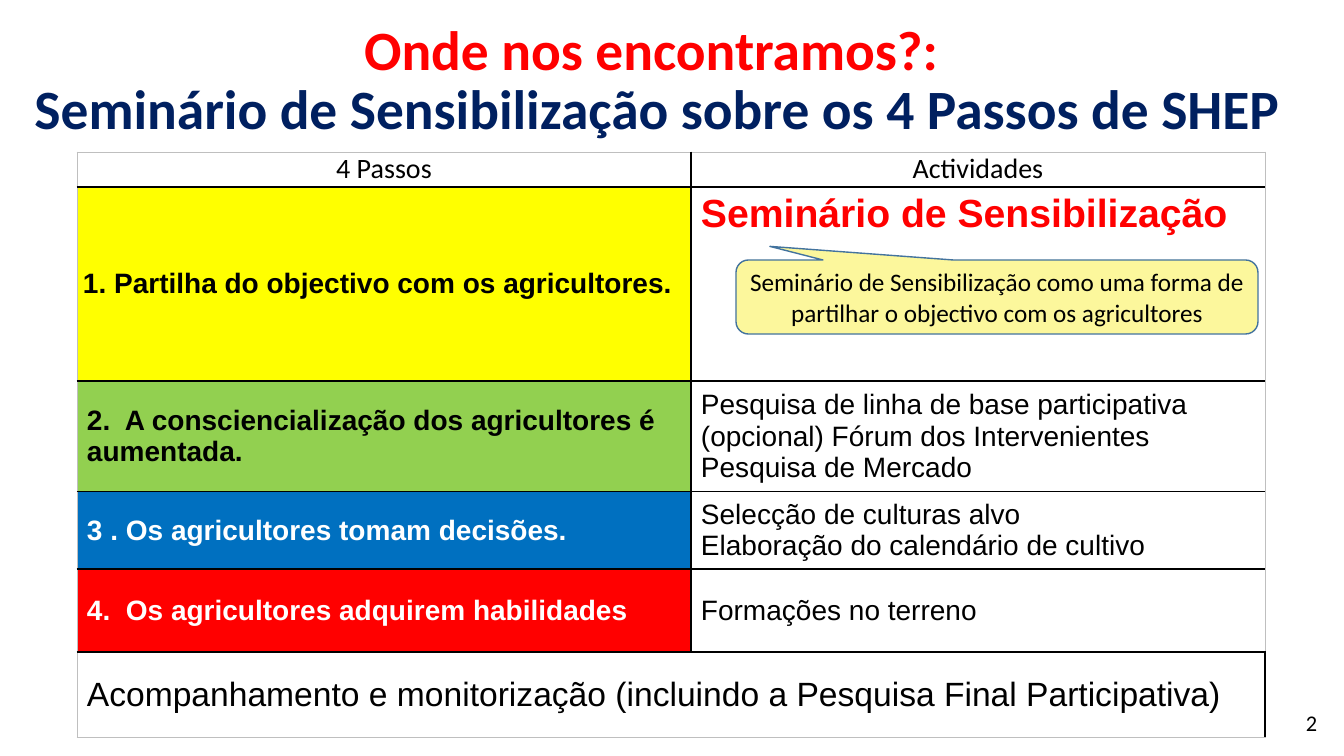
"""Build the slide showing where the awareness seminar sits in the four SHEP steps."""
from lxml import etree
from pptx import Presentation, util as u
from pptx.dml.color import RGBColor
from pptx.enum import shapes, text
from pptx.oxml import ns

PX = 9071
BLACK, WHITE, RED, NAVY = "000000", "FFFFFF", "FF0000", "002060"
GRID, FRAME = (BLACK, 1), ("BFBFBF", 0.5)
CENTER, LEFT, RIGHT = text.PP_ALIGN.CENTER, text.PP_ALIGN.LEFT, text.PP_ALIGN.RIGHT
MIDDLE, TOP = text.MSO_ANCHOR.MIDDLE, text.MSO_ANCHOR.TOP

HEADING = {"name": "Calibri", "size": 39.6, "bold": True}
HEADER = {"name": "Calibri", "size": 20, "bold": False, "color": BLACK}
BODY = {"name": "Arial", "size": 20, "bold": False, "color": BLACK}
STEP = BODY | {"bold": True}
STEP_WHITE = STEP | {"color": WHITE}
CURRENT = STEP | {"size": 28, "color": RED}
CLOSING = BODY | {"size": 24}
NOTE = HEADER | {"size": 18}
NUMBER = HEADER | {"size": 16}

TITLE_BOX = (8, 9, 1299, 146)
TITLE = [("Onde nos encontramos?: ", RED),
         ("Seminário de Sensibilização sobre os 4 Passos de SHEP", NAVY)]
TABLE_ORIGIN = (77, 152)
COLUMNS = [614, 574]
ROWS = [35, 194, 108, 76, 83, 85]
TIGHT, NORMAL = (6, 0), (10, 5)
CELLS = [
    [(["4 Passos"], HEADER, WHITE, CENTER, TOP, TIGHT),
     (["Actividades"], HEADER, WHITE, CENTER, TOP, TIGHT)],
    [(["1. Partilha do objectivo com os agricultores."], STEP, "FFFF00", LEFT, MIDDLE, TIGHT),
     (["Seminário de Sensibilização"], CURRENT, WHITE, LEFT, TOP, NORMAL)],
    [(["2.  A consciencialização dos agricultores é aumentada."],
      STEP, "92D050", LEFT, MIDDLE, NORMAL),
     (["Pesquisa de linha de base participativa (opcional) Fórum dos Intervenientes",
       "Pesquisa de Mercado"], BODY, WHITE, LEFT, MIDDLE, NORMAL)],
    [(["3 . Os agricultores tomam decisões."], STEP_WHITE, "0070C0", LEFT, MIDDLE, NORMAL),
     (["Selecção de culturas alvo", "Elaboração do calendário de cultivo"],
      BODY, WHITE, LEFT, MIDDLE, NORMAL)],
    [(["4.  Os agricultores adquirem habilidades"], STEP_WHITE, RED, LEFT, MIDDLE, NORMAL),
     (["Formações no terreno"], BODY, WHITE, LEFT, MIDDLE, NORMAL)],
    [(["Acompanhamento e monitorização (incluindo a Pesquisa Final Participativa)"],
      CLOSING, WHITE, LEFT, MIDDLE, NORMAL)],
]
CALLOUT_BOX = (736, 260, 522, 74)
CALLOUT_SHAPE = (-0.435, -0.684, 0.167)
CALLOUT = "Seminário de Sensibilização como uma forma de partilhar o objectivo com os agricultores"
NUMBER_BOX = (1025, 703, 302, 40)


def px(*lengths):
    return [u.Emu(length * PX) for length in lengths]


def rgb(value):
    return RGBColor.from_string(value)


def paint(target, color):
    target.fill.solid()
    target.fill.fore_color.rgb = rgb(color)


def add_run(paragraph, words, style):
    run = paragraph.add_run()
    run.text = words
    for name, value in style.items():
        if name == "color":
            run.font.color.rgb = rgb(value)
        else:
            setattr(run.font, name, u.Pt(value) if name == "size" else value)


def write(frame, lines, style, align):
    for index, line in enumerate(lines):
        paragraph = frame.add_paragraph() if index else frame.paragraphs[0]
        paragraph.alignment = align
        add_run(paragraph, line, style)


def set_borders(cell, borders):
    properties = cell._tc.get_or_add_tcPr()
    for index, (side, (color, width)) in enumerate(borders.items()):
        line = etree.Element(ns.qn(f"a:ln{side}"), w=str(u.Pt(width)))
        fill = etree.SubElement(line, ns.qn("a:solidFill"))
        etree.SubElement(fill, ns.qn("a:srgbClr"), val=color)
        properties.insert(index, line)


def add_title(slide):
    title = slide.shapes.title
    title.left, title.top, title.width, title.height = px(*TITLE_BOX)
    frame = title.text_frame
    frame.auto_size, frame.vertical_anchor = text.MSO_AUTO_SIZE.NONE, MIDDLE
    paragraph = frame.paragraphs[0]
    paragraph.alignment, paragraph.line_spacing = CENTER, 0.9
    for index, (words, color) in enumerate(TITLE):
        if index:
            paragraph.add_line_break()
        add_run(paragraph, words, HEADING | {"color": color})


def add_steps_table(slide):
    box = px(*TABLE_ORIGIN, sum(COLUMNS), sum(ROWS))
    table = slide.shapes.add_table(len(ROWS), len(COLUMNS), *box).table
    table.first_row = table.horz_banding = False
    for column, width in zip(table.columns, px(*COLUMNS)):
        column.width = width
    for row, height in zip(table.rows, px(*ROWS)):
        row.height = height
    last_row, last_column = len(ROWS) - 1, len(COLUMNS) - 1
    table.cell(last_row, 0).merge(table.cell(last_row, last_column))
    for r, contents in enumerate(CELLS):
        for c, (lines, style, color, align, anchor, (side, edge)) in enumerate(contents):
            cell = table.cell(r, c)
            cell.margin_left, cell.margin_right = px(side, side)
            cell.margin_top, cell.margin_bottom = px(edge, edge)
            cell.vertical_anchor = anchor
            paint(cell, color)
            write(cell.text_frame, lines, style, align)
        for c in range(len(COLUMNS)):
            outer = {"L": c == 0, "R": c == last_column, "T": r == 0, "B": r == last_row}
            set_borders(table.cell(r, c),
                        {side: FRAME if edge else GRID for side, edge in outer.items()})


def add_callout(slide):
    kind = shapes.MSO_SHAPE.ROUNDED_RECTANGULAR_CALLOUT
    callout = slide.shapes.add_shape(kind, *px(*CALLOUT_BOX))
    callout.shadow.inherit = False
    for index, value in enumerate(CALLOUT_SHAPE):
        callout.adjustments[index] = value
    paint(callout, "FCF79C")
    callout.line.color.rgb, callout.line.width = rgb("43739E"), u.Pt(1)
    callout.text_frame.vertical_anchor = MIDDLE
    write(callout.text_frame, [CALLOUT], NOTE, CENTER)


def add_number(slide):
    frame = slide.shapes.add_textbox(*px(*NUMBER_BOX)).text_frame
    frame.word_wrap, frame.vertical_anchor = True, MIDDLE
    write(frame, ["2"], NUMBER, RIGHT)


def main():
    presentation = Presentation()
    presentation.slide_width, presentation.slide_height = px(1344, 756)
    slide = presentation.slides.add_slide(presentation.slide_layouts[5])
    add_title(slide)
    add_number(slide)
    add_steps_table(slide)
    add_callout(slide)
    presentation.save("out.pptx")


if __name__ == "__main__":
    main()
